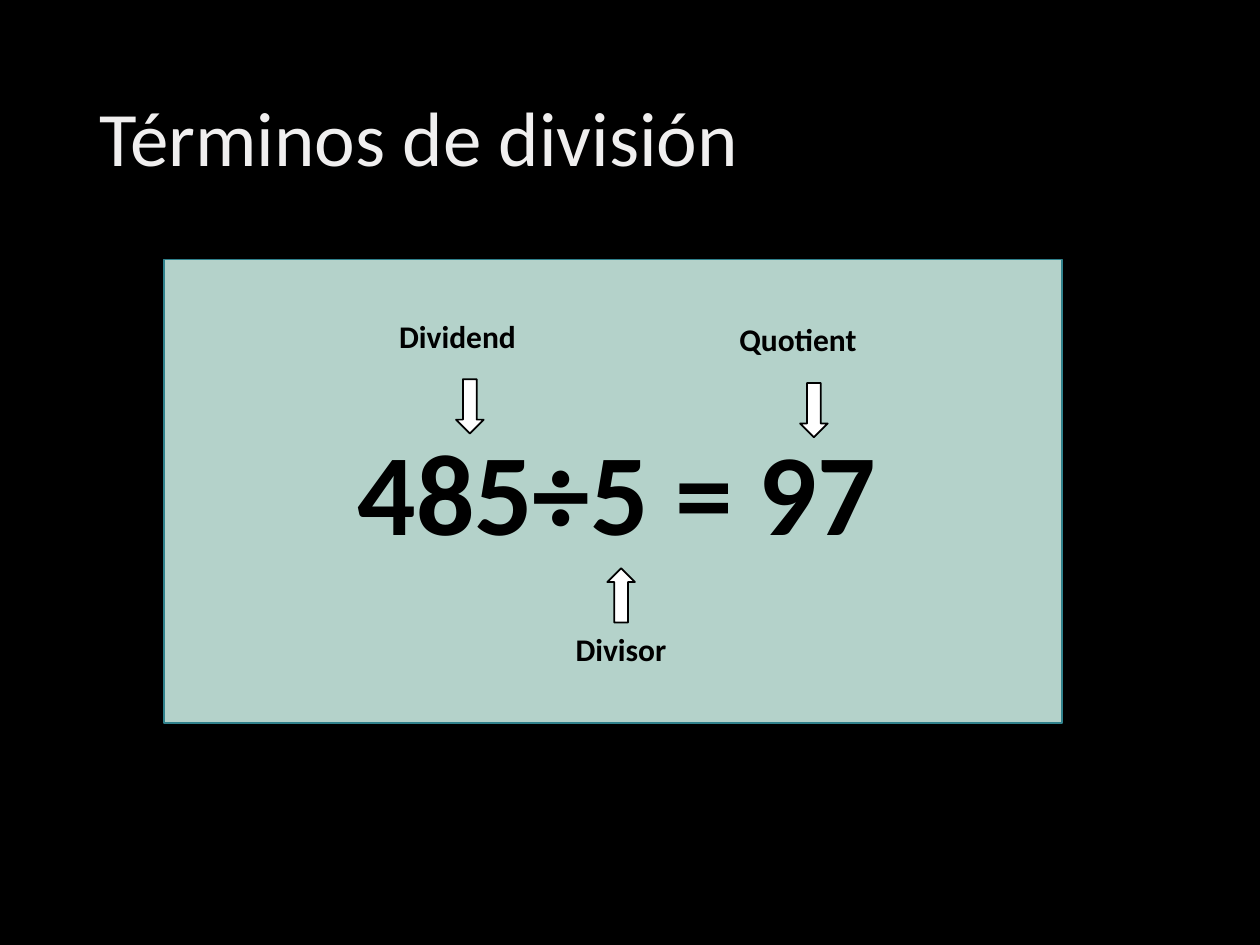
from pptx import Presentation
from pptx.dml.color import RGBColor
from pptx.enum.shapes import MSO_SHAPE
from pptx.enum.text import MSO_ANCHOR
from pptx.util import Pt

RECT, DOWN_ARROW = MSO_SHAPE.RECTANGLE, MSO_SHAPE.DOWN_ARROW
TOP, MIDDLE = MSO_ANCHOR.TOP, MSO_ANCHOR.MIDDLE
BLACK = RGBColor(0x00, 0x00, 0x00)
WHITE = RGBColor(0xFF, 0xFF, 0xFF)
TITLE_GRAY = RGBColor(0xF0, 0xEF, 0xEF)
MINT = RGBColor(0xB4, 0xD2, 0xCA)
TEAL = RGBColor(0x30, 0x81, 0x8C)
FONT = "Calibri"


def add_text(s, box, text, size, color=BLACK, bold=True, anchor=TOP, indent=7.2):
    """Add a one-paragraph text box and return its paragraph."""
    tf = s.shapes.add_textbox(*map(Pt, box)).text_frame
    tf.word_wrap = True
    tf.vertical_anchor = anchor
    tf.margin_left = Pt(indent)
    p = tf.paragraphs[0]
    p.text = text
    font = p.runs[0].font
    font.name, font.size, font.bold = FONT, Pt(size), bold
    font.color.rgb = color
    return p


def add_block(s, kind, box, fill, line):
    """Add a filled preset shape with a thin outline."""
    sp = s.shapes.add_shape(kind, *map(Pt, box))
    sp.shadow.inherit = False
    sp.fill.solid()
    sp.fill.fore_color.rgb = fill
    sp.line.color.rgb = line
    sp.line.width = Pt(1)
    return sp


def add_title(s, box):
    """Add the slide title."""
    p = add_text(s, box, "Términos de división", 44, TITLE_GRAY, False, MIDDLE)
    p.line_spacing = 0.9


def add_division(s, box):
    """Add the panel with the equation and an arrow for each of its terms."""
    left, top = box[:2]
    add_block(s, RECT, box, MINT, TEAL)
    add_text(s, (left + 43.9, top + 87.9, 385.9, 87.1), "485÷5 = 97", 66, indent=66.9)
    terms = [
        ("Quotient", (321.8, 31), (363.6, 70.6), 0),
        ("Dividend", (127.4, 29.5), (167, 68.4), 0),
        ("Divisor", (228.2, 208.1), (253.4, 176.4), 180),
    ]
    for name, (x, y), (arrow_x, arrow_y), rotation in terms:
        add_text(s, (left + x, top + y, 128.9, 28.8), name, 18)
        arrow_box = (left + arrow_x, top + arrow_y, 15.8, 31)
        add_block(s, DOWN_ARROW, arrow_box, WHITE, BLACK).rotation = rotation


def main():
    """Build and save the slide."""
    prs = Presentation()
    prs.slide_width, prs.slide_height = Pt(720), Pt(540)
    s = prs.slides.add_slide(prs.slide_layouts[6])
    s.background.fill.solid()
    s.background.fill.fore_color.rgb = BLACK
    add_title(s, (49.7, 28.8, 620.6, 104.4))
    add_division(s, (93.6, 148.3, 513.4, 265))
    prs.save("out.pptx")


if __name__ == "__main__":
    main()
